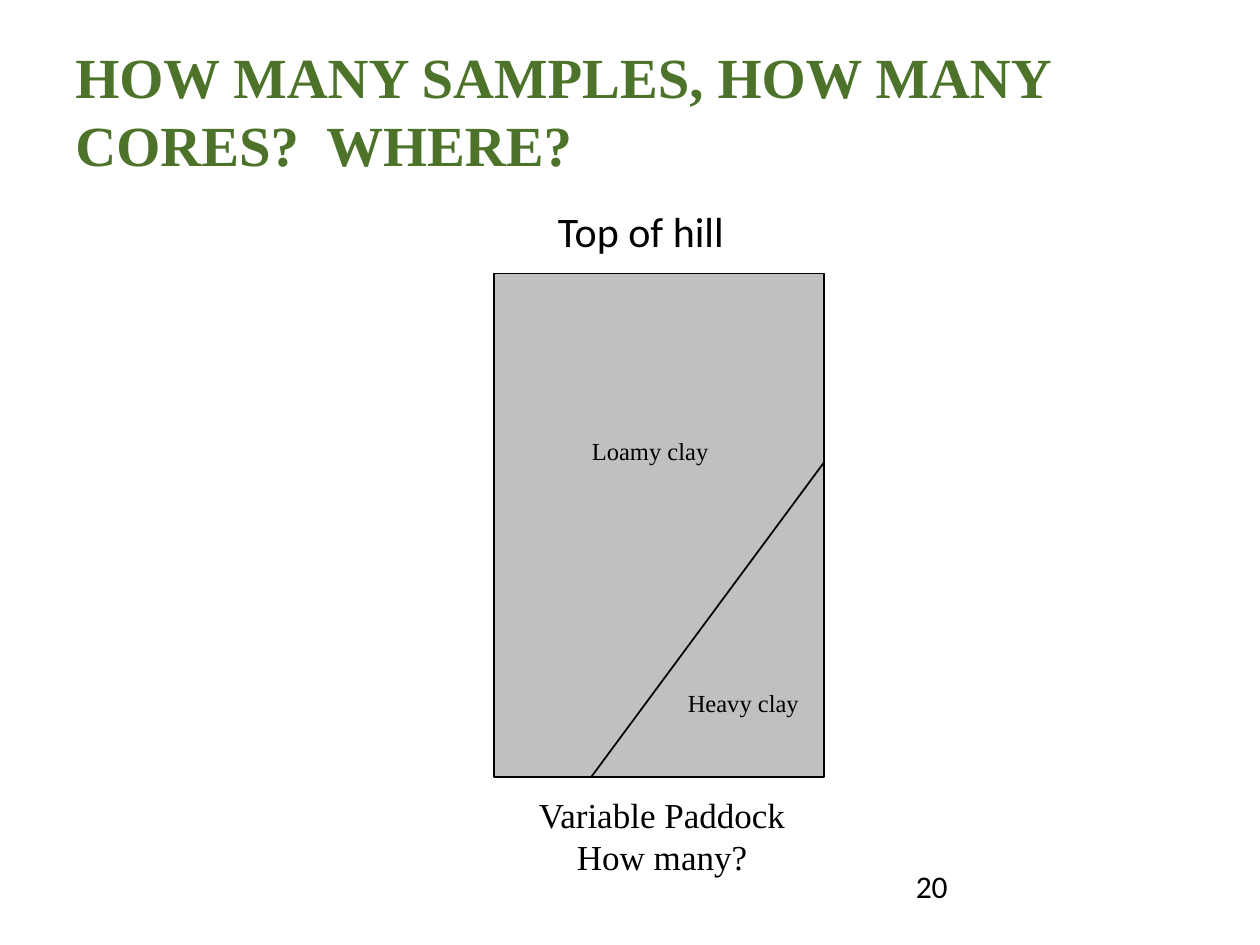
from dataclasses import dataclass

from lxml import etree
from pptx import Presentation
from pptx.dml.color import RGBColor
from pptx.enum.shapes import MSO_CONNECTOR, MSO_SHAPE
from pptx.enum.text import MSO_ANCHOR, MSO_AUTO_SIZE, PP_ALIGN
from pptx.oxml.ns import qn
from pptx.util import Inches, Pt

RECTANGLE = MSO_SHAPE.RECTANGLE
STRAIGHT = MSO_CONNECTOR.STRAIGHT
TOP, MIDDLE = MSO_ANCHOR.TOP, MSO_ANCHOR.MIDDLE
LEFT, CENTER = PP_ALIGN.LEFT, PP_ALIGN.CENTER
GROW, FIXED = MSO_AUTO_SIZE.SHAPE_TO_FIT_TEXT, MSO_AUTO_SIZE.NONE

COLORS = {"black": "000000", "paddock": "C0C0C0", "title": "4C7329"}
SANS, SERIF = "Calibri", "Times New Roman"


@dataclass(frozen=True)
class Area:
    left: float
    top: float
    width: float
    height: float

    @property
    def right(self) -> float:
        return self.left + self.width

    @property
    def bottom(self) -> float:
        return self.top + self.height

    def lengths(self) -> tuple:
        return tuple(map(Inches, (self.left, self.top, self.width, self.height)))


PADDOCK = Area(3.92, 2.17, 2.62, 4)
BOUNDARY_TOP = 3.67
BOUNDARY_LEFT = 4.69


def color(name: str) -> RGBColor:
    return RGBColor.from_string(COLORS[name])


def outline(item) -> None:
    item.line.color.rgb = color("black")
    item.line.width = Pt(1)


def add_text(page, area: Area, text: str, *, size: float, font: str = SERIF,
             ink: str = "black", bold: bool = False, align=CENTER,
             anchor=TOP, wrap: bool = False, fit=GROW) -> None:
    """Place text in a box, with one paragraph for each line of text."""
    box = page.shapes.add_textbox(*area.lengths())
    frame = box.text_frame
    frame.text = text
    frame.word_wrap = wrap
    frame.auto_size = fit
    frame.vertical_anchor = anchor
    for para in frame.paragraphs:
        para.alignment = align
        for span in para.runs:
            span.font.name = font
            span.font.size = Pt(size)
            span.font.bold = bold
            span.font.color.rgb = color(ink)


def add_paddock(page) -> None:
    """Draw the paddock and the boundary between its two soils."""
    field = page.shapes.add_shape(RECTANGLE, *PADDOCK.lengths())
    field.shadow.inherit = False
    field.fill.solid()
    field.fill.fore_color.rgb = color("paddock")
    outline(field)

    boundary = page.shapes.add_connector(
        STRAIGHT, Inches(PADDOCK.right), Inches(BOUNDARY_TOP),
        Inches(BOUNDARY_LEFT), Inches(PADDOCK.bottom))
    outline(boundary)
    etree.SubElement(boundary._element.spPr, qn("a:effectLst"))


def main() -> None:
    deck = Presentation()
    deck.slide_width, deck.slide_height = Inches(10), Inches(7.5)
    page = deck.slides.add_slide(deck.slide_layouts[6])

    add_text(page, Area(7.17, 6.83, 2.33, 0.52), "20", size=18, font=SANS,
             align=LEFT, wrap=True, fit=FIXED)
    add_paddock(page)
    add_text(page, Area(4.57, 3.41, 1.18, 0.33), "Loamy clay", size=14, wrap=True)
    add_text(page, Area(5.36, 5.41, 1.08, 0.33), "Heavy clay", size=14)
    add_text(page, Area(4.17, 6.25, 2.17, 0.77), "Variable Paddock\nHow many?", size=20)
    add_text(page, Area(4.33, 1.58, 1.63, 0.5), "Top of hill", size=24, font=SANS,
             align=LEFT)
    add_text(page, Area(0.5, 0.25, 8.5, 1.25),
             "HOW MANY SAMPLES, HOW MANY CORES?  WHERE?", size=32.4, ink="title",
             bold=True, align=LEFT, anchor=MIDDLE, wrap=True, fit=FIXED)

    deck.save("out.pptx")


if __name__ == "__main__":
    main()
